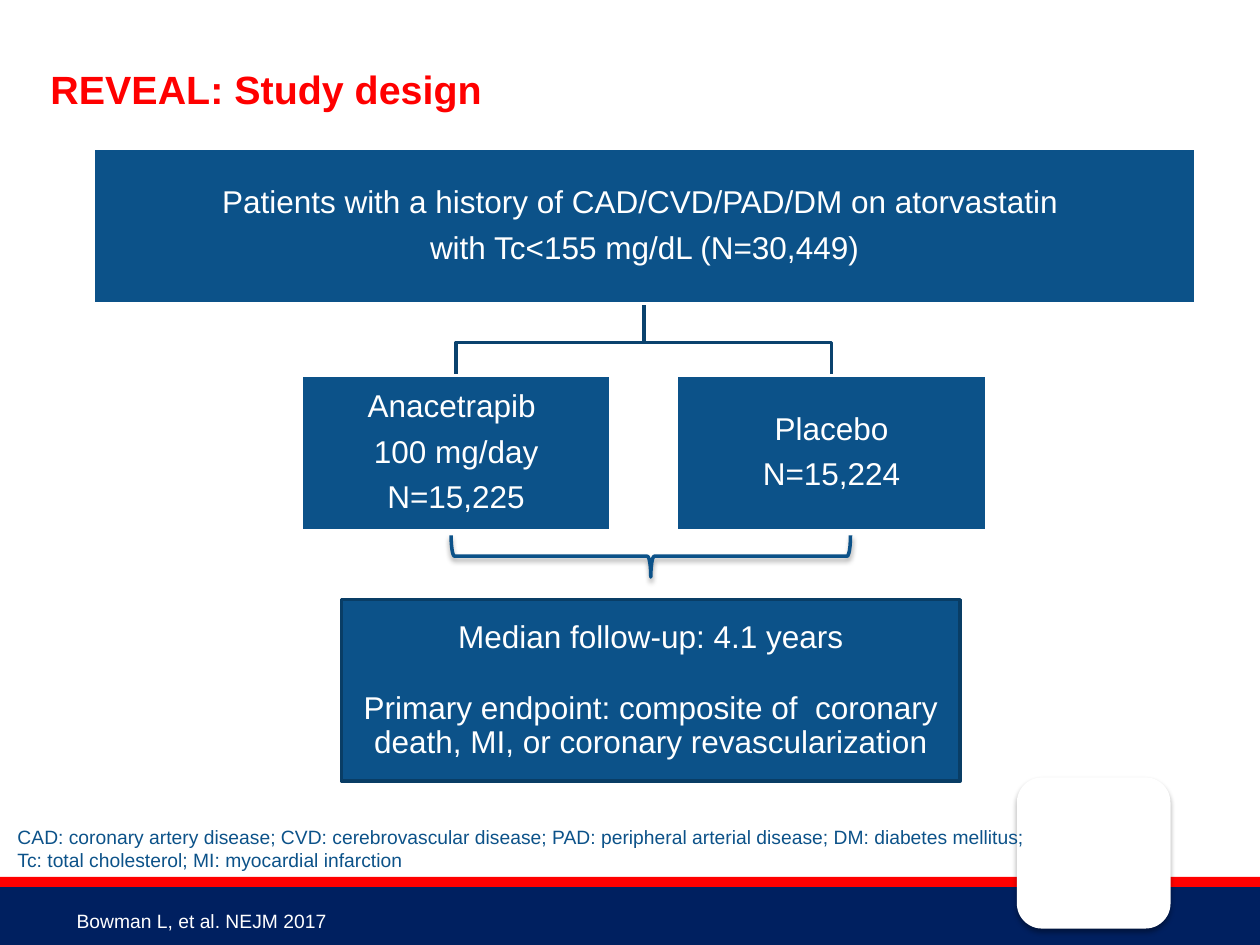
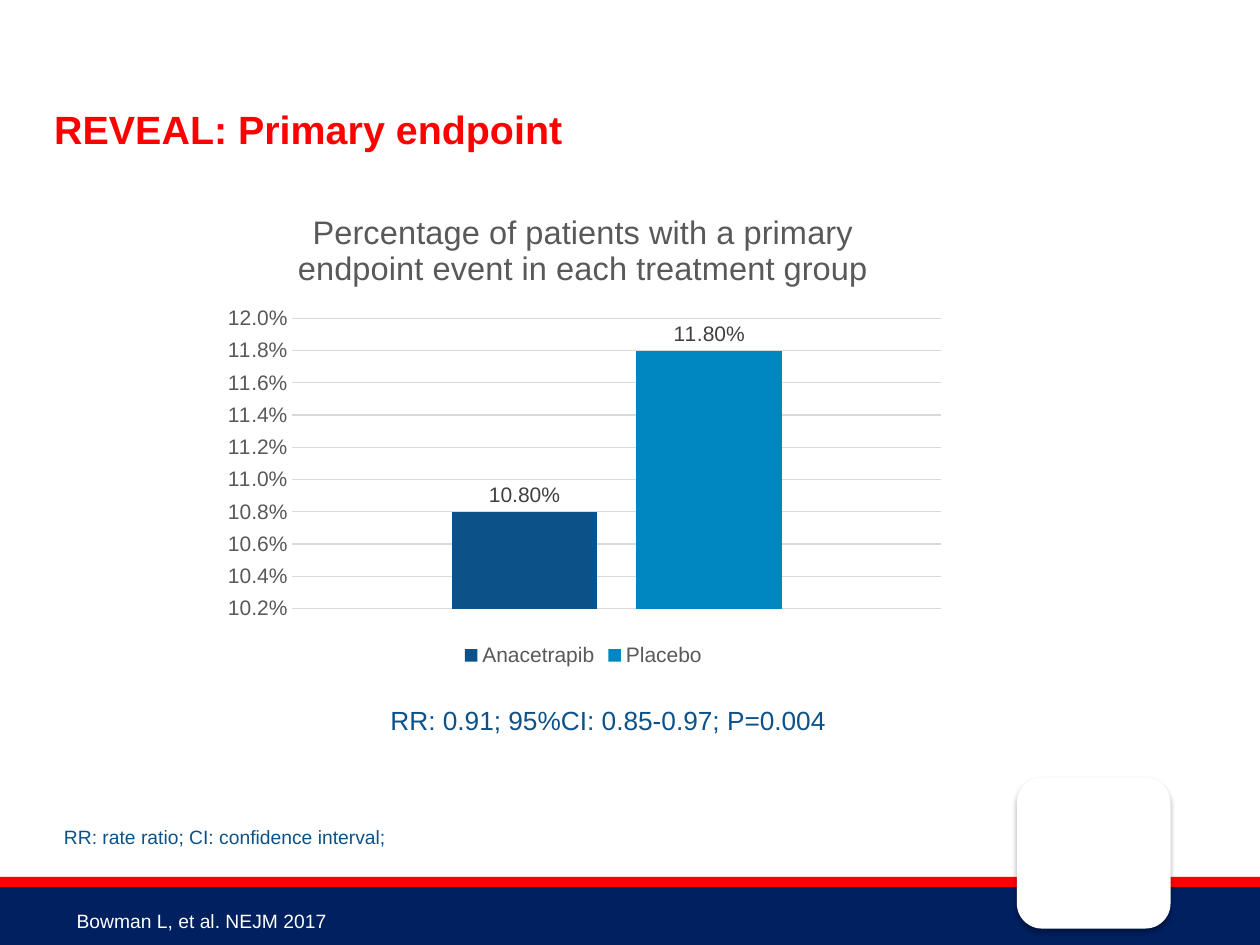
from lxml import etree
from pptx import Presentation
from pptx.chart.data import CategoryChartData
from pptx.dml.color import RGBColor
from pptx.enum.chart import XL_CHART_TYPE as ChartType
from pptx.enum.chart import XL_LABEL_POSITION as LabelPosition
from pptx.enum.chart import XL_LEGEND_POSITION as LegendPosition
from pptx.enum.chart import XL_TICK_MARK as TickMark
from pptx.enum.shapes import MSO_SHAPE as Shape
from pptx.enum.text import MSO_ANCHOR as Anchor
from pptx.enum.text import PP_ALIGN as Align
from pptx.oxml import parse_xml
from pptx.oxml.ns import qn
from pptx.util import Inches, Pt

FONT = "Arial"
WHITE, RED, NAVY = "FFFFFF", "FF0000", "002060"
BLUE, SKY, GREY = "0C5289", "0086C0", "595959"
TREE_LINE, ENDPOINT_LINE = "0A426E", "093D65"
NS = "http://schemas.openxmlformats.org/drawingml/2006/"
hex_color = RGBColor.from_string


def paint(shape, fill=None, line=None):
    """Set a flat fill and a 2 pt outline, or none of either, without a shadow."""
    shape.shadow.inherit = False
    if fill:
        shape.fill.solid()
        shape.fill.fore_color.rgb = hex_color(fill)
    else:
        shape.fill.background()
    if line:
        shape.line.color.rgb = hex_color(line)
        shape.line.width = Pt(2)
    else:
        shape.line.fill.background()


def write(frame, lines, size, color, align=Align.LEFT, gap=0, spacing=None):
    """Fill a text frame with one paragraph a line, gap points apart."""
    frame.word_wrap = True
    for index, line in enumerate(lines):
        para = frame.paragraphs[0] if index == 0 else frame.add_paragraph()
        para.text = line
        para.alignment = align
        para.line_spacing = spacing
        if index and gap:
            para.space_before = Pt(gap)
        para.font.name = FONT
        para.font.size = Pt(size)
        para.font.color.rgb = hex_color(color)


deck = Presentation()
deck.slide_width, deck.slide_height = Inches(10), Inches(7.5)

# Frame of both slides: title, bands, corner plate, notes
pages = []
shadowed = []
slide_texts = [
    ("REVEAL: Study design", 0.4, -0.02, 0.04, 8.21, 0.47,
     "CAD: coronary artery disease; CVD: cerebrovascular disease; "
     "PAD: peripheral arterial disease; DM: diabetes mellitus; "
     "Tc: total cholesterol; MI: myocardial infarction"),
    ("REVEAL: Primary endpoint", 0.43, 0.3, 0.41, 7.93, 0.29,
     "RR: rate ratio; CI: confidence interval;"),
]
for heading, left, top, note_left, note_width, note_height, note in slide_texts:
    page = deck.slides.add_slide(deck.slide_layouts[5])
    pages.append(page)

    title = page.shapes.title
    title.left, title.top = Inches(left), Inches(top)
    title.width, title.height = Inches(9.07), Inches(0.91)
    frame = title.text_frame
    frame.margin_left = frame.margin_right = frame.margin_top = frame.margin_bottom = 0
    frame.vertical_anchor = Anchor.BOTTOM
    write(frame, [heading], 22.5, RED, spacing=Pt(22.5))
    frame.paragraphs[0].font.bold = True

    for band_top, band_height, color in [(7.02, 0.48, NAVY), (6.96, 0.08, RED)]:
        band = page.shapes.add_shape(
            Shape.RECTANGLE, 0, Inches(band_top), deck.slide_width, Inches(band_height))
        paint(band, color)

    plate = page.shapes.add_shape(
        Shape.ROUNDED_RECTANGLE, Inches(8.07), Inches(6.17), Inches(1.22), Inches(1.2))
    paint(plate, WHITE)
    shadowed.append(plate)

    for text, color, box in [
        (note, BLUE, (note_left, 6.5, note_width, note_height)),
        ("Bowman L, et al. NEJM 2017", WHITE, (0.51, 7.17, 4.74, 0.29)),
    ]:
        label = page.shapes.add_textbox(*map(Inches, box))
        write(label.text_frame, [text], 11, color)

design, endpoint = pages

# Study design: tree, brace and boxes
trunk_x, box_height = 5.11, 1.23
for arm_x in (6.6, 3.62):
    builder = design.shapes.build_freeform(Inches(trunk_x), Inches(2.41))
    corners = [(trunk_x, 2.72), (arm_x, 2.72), (arm_x, 2.98)]
    builder.add_line_segments([(Inches(x), Inches(y)) for x, y in corners], close=False)
    paint(builder.convert_to_shape(), line=TREE_LINE)

brace = design.shapes.add_shape(
    Shape.RIGHT_BRACE, Inches(5), Inches(2.83), Inches(0.33), Inches(3.17))
brace.rotation = 90
paint(brace, line=BLUE)
shadowed.append(brace)

study_boxes = [
    ((0.74, 1.18, 8.75, box_height), WHITE, 6.5, 0.9,
     ["Patients with a history of CAD/CVD/PAD/DM on atorvastatin ",
      "with Tc<155 mg/dL (N=30,449)"]),
    ((2.39, 2.98, 2.46, box_height), WHITE, 6.5, 0.9,
     ["Anacetrapib ", "100 mg/day", "N=15,225"]),
    ((5.37, 2.98, 2.46, box_height), WHITE, 6.5, 0.9, ["Placebo", "N=15,224"]),
    ((2.71, 4.76, 4.91, 1.44), ENDPOINT_LINE, 21, 0.9,
     ["Median follow-up: 4.1 years",
      "Primary endpoint: composite of  coronary death, MI, or coronary revascularization"]),
]
for box, outline, gap, spacing, lines in study_boxes:
    block = design.shapes.add_shape(Shape.RECTANGLE, *map(Inches, box))
    paint(block, BLUE, outline)
    frame = block.text_frame
    frame.margin_left = frame.margin_right = Inches(0.01)
    frame.margin_top = frame.margin_bottom = Inches(0.01)
    frame.vertical_anchor = Anchor.MIDDLE
    write(frame, lines, 18, WHITE, Align.CENTER, gap, spacing)

for shape in shadowed:
    effects = shape._element.spPr.find(qn("a:effectLst"))
    effects.append(parse_xml(
        f'<a:outerShdw xmlns:a="{NS}main" blurRad="{Pt(3.1)}" dist="{Pt(1.8)}" '
        'dir="5400000" rotWithShape="0"><a:srgbClr val="000000">'
        '<a:alpha val="35000"/></a:srgbClr></a:outerShdw>'))

# Primary endpoint: column chart and result
data = CategoryChartData()
data.categories = ["1"]
data.add_series("Anacetrapib", [0.108])
data.add_series("Placebo", [0.118])
chart = endpoint.shapes.add_chart(
    ChartType.COLUMN_CLUSTERED, Inches(1.67), Inches(1.49),
    Inches(5.92), Inches(3.84), data).chart
chart.font.name = FONT
chart.font.size = Pt(12)
chart.font.color.rgb = hex_color(GREY)

chart.has_title = True
para = chart.chart_title.text_frame.paragraphs[0]
para.text = "Percentage of patients with a primary endpoint event in each treatment group"
para.font.name = FONT
para.font.size = Pt(18.6)
para.font.bold = False
para.font.color.rgb = hex_color(GREY)
chart.chart_title.include_in_layout = False

chart.has_legend = True
chart.legend.position = LegendPosition.BOTTOM
chart.legend.include_in_layout = False

chart.category_axis.visible = False
axis = chart.value_axis
axis.minimum_scale, axis.maximum_scale, axis.major_unit = 0.102, 0.12, 0.002
axis.major_tick_mark = TickMark.NONE
axis.tick_labels.number_format = "0.0%"
axis.tick_labels.number_format_is_linked = False
axis.format.line.fill.background()
axis.major_gridlines.format.line.color.rgb = hex_color("D9D9D9")
axis.major_gridlines.format.line.width = Pt(0.75)

plot = chart.plots[0]
plot.gap_width, plot.overlap = 219, -27
plot.vary_by_categories = False
for series, color in zip(plot.series, (BLUE, SKY)):
    series.format.fill.solid()
    series.format.fill.fore_color.rgb = hex_color(color)
    labels = series.data_labels
    labels.show_value = True
    labels.position = LabelPosition.OUTSIDE_END
    labels.number_format = "0.00%"
    labels.number_format_is_linked = False
    labels.font.name = FONT
    labels.font.size = Pt(12)
    labels.font.color.rgb = hex_color("404040")

plot_area = chart._chartSpace.chart.plotArea
for old_layout in plot_area.findall(qn("c:layout")):
    plot_area.remove(old_layout)
layout = etree.Element(qn("c:layout"))
manual = etree.SubElement(layout, qn("c:manualLayout"))
for tag, value in [("layoutTarget", "inner"), ("xMode", "edge"), ("yMode", "edge"),
                   ("x", "0.11"), ("y", "0.27"), ("w", "0.87"), ("h", "0.6")]:
    etree.SubElement(manual, qn(f"c:{tag}")).set("val", value)
plot_area.insert(0, layout)

result = endpoint.shapes.add_textbox(Inches(3), Inches(5.54), Inches(3.89), Inches(0.35))
write(result.text_frame, ["RR: 0.91; 95%CI: 0.85-0.97; P=0.004"], 15, BLUE)

deck.save("out.pptx")
